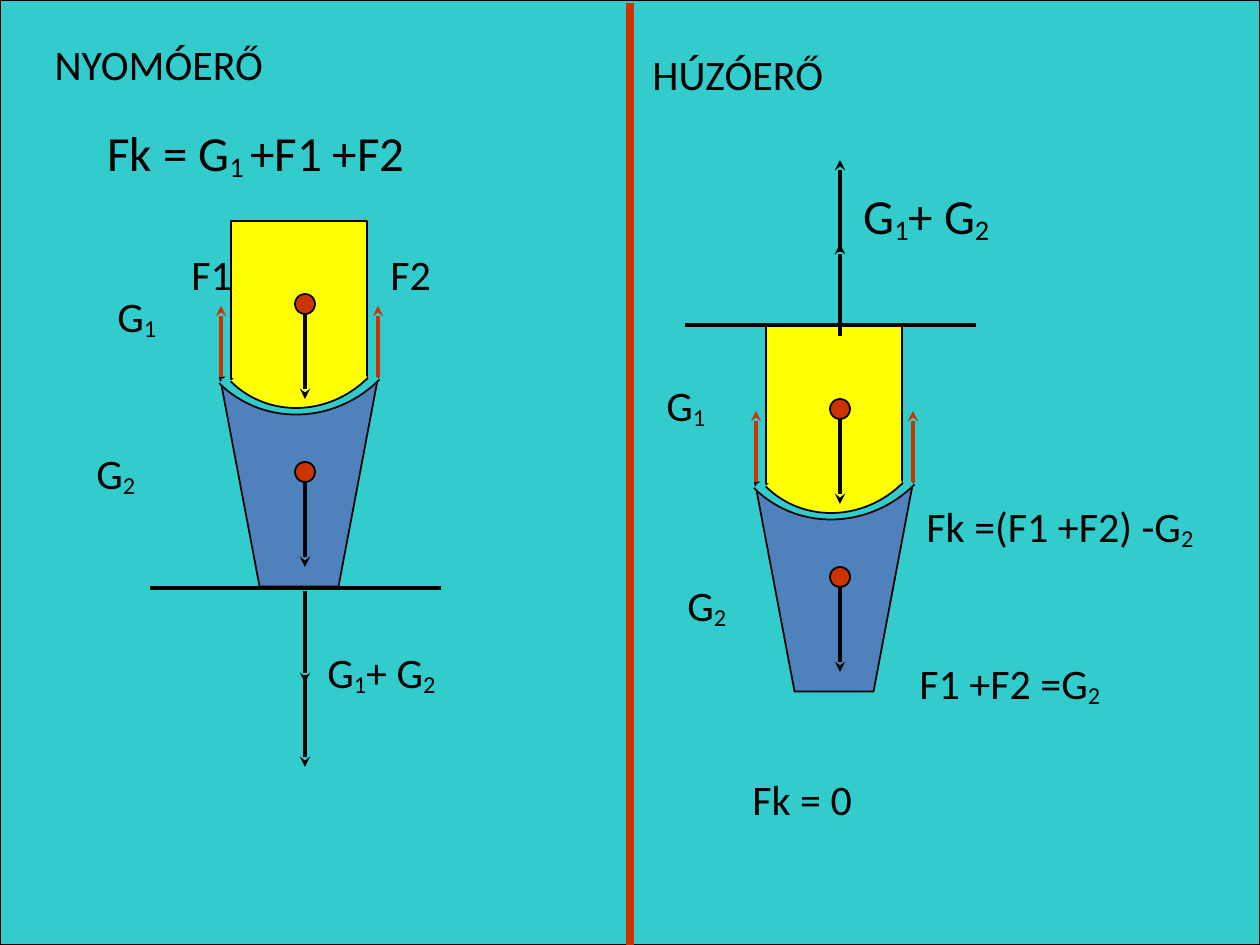
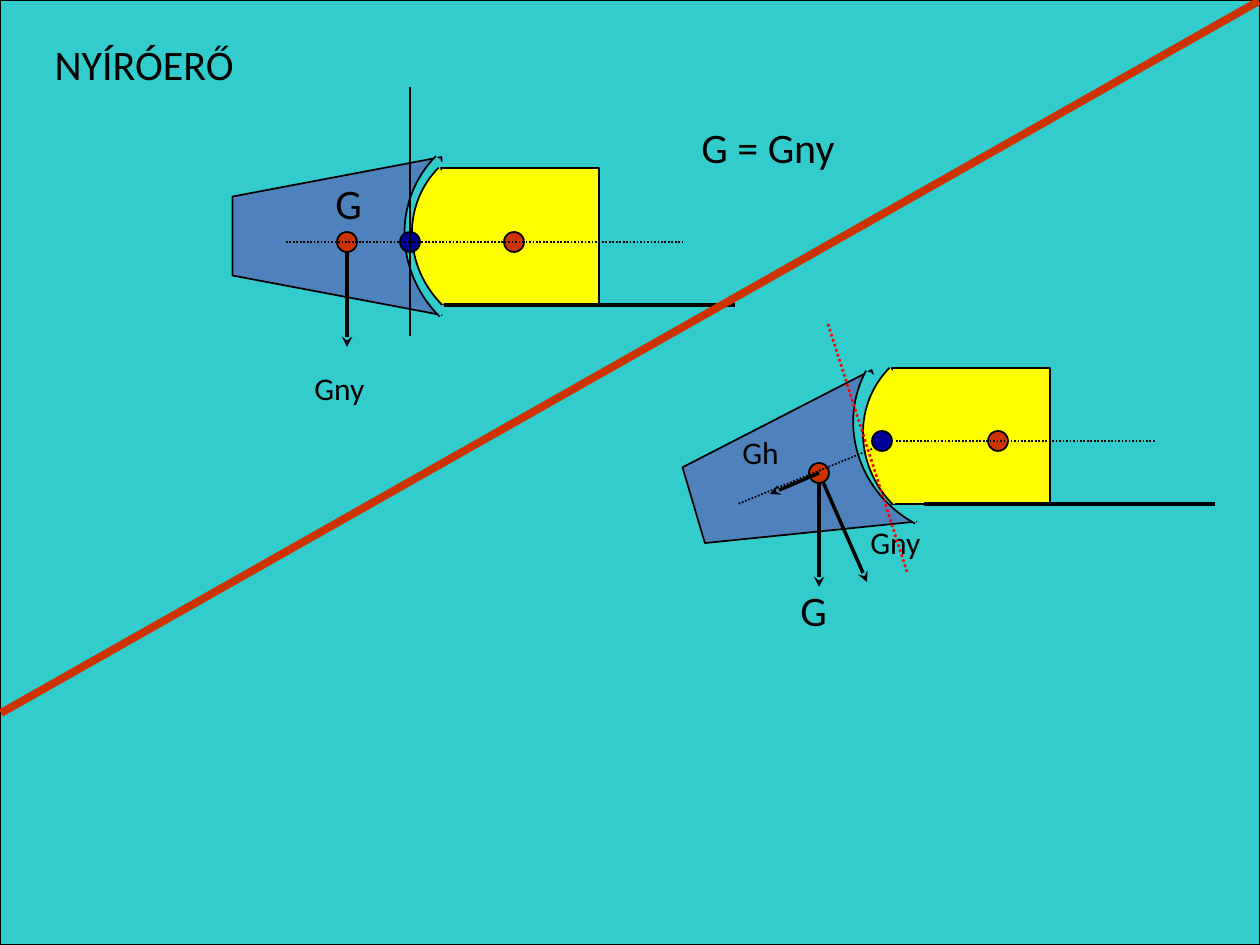
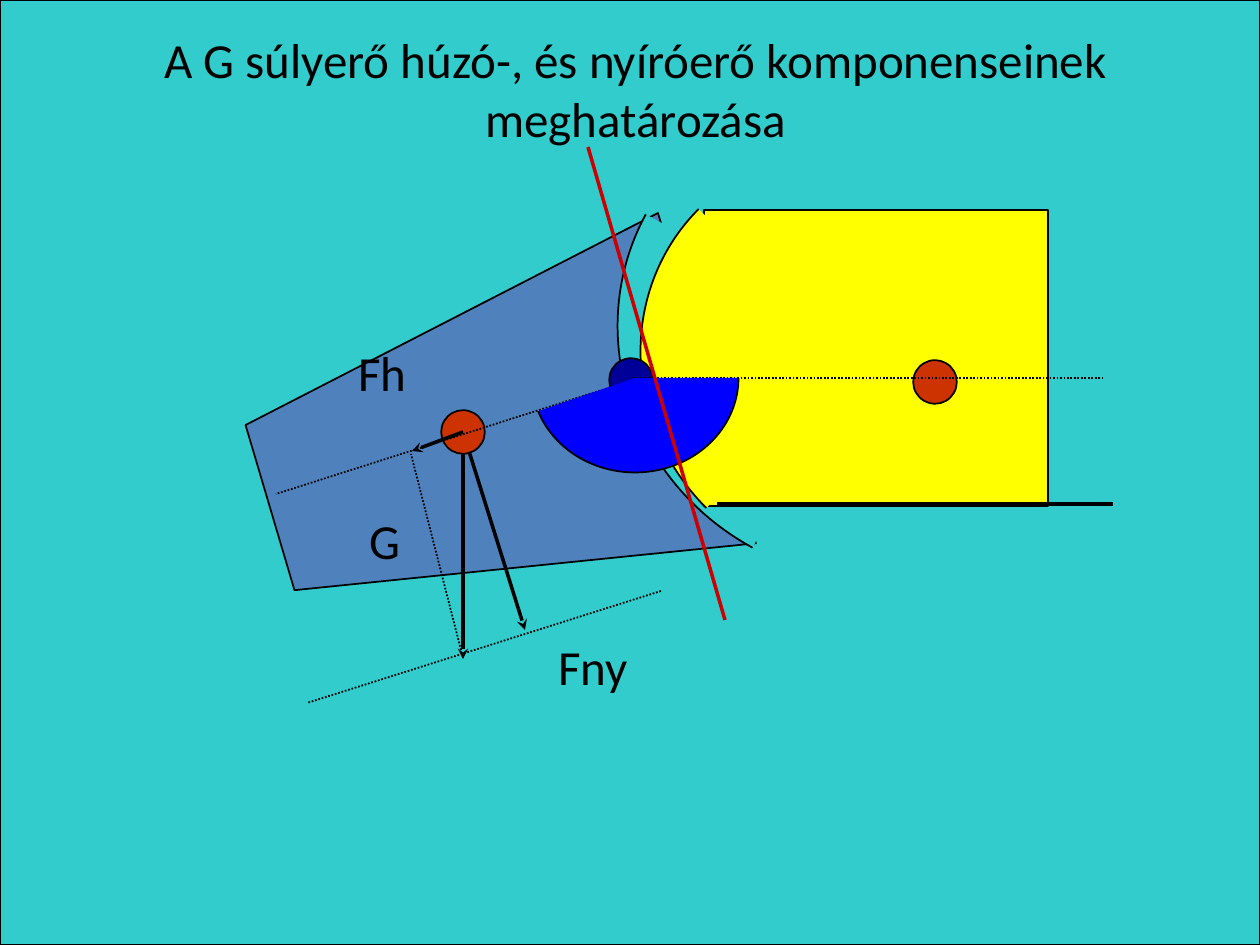
"""Builds three slides on the pressing, pulling and shearing forces in a joint."""
from math import cos, radians, sin

from lxml.etree import SubElement
from pptx import Presentation
from pptx.dml.color import RGBColor
from pptx.enum.dml import MSO_LINE
from pptx.enum.shapes import MSO_CONNECTOR as CONN, MSO_SHAPE as SHAPE
from pptx.enum.text import MSO_ANCHOR as ANCHOR, MSO_AUTO_SIZE as AUTO, PP_ALIGN as ALIGN
from pptx.oxml.ns import qn
from pptx.util import Emu, Pt

PX = 914400 / 126
SLIDE = (1260, 945)
THEME = {
    "font": "Calibri", "ink": "000000", "ground": "33CCCC", "upper": "FFFF00",
    "lower": "4F81BD", "mass": "CC3300", "pivot": "000099", "angle": "0000FF",
    "big": 28, "mid": 24, "small": 18, "outline": 1,
}
LINES = {
    "force": ("000000", 2, "arrow", (0, 92)),
    "friction": ("CC3300", 2, "arrow", (0, -71)),
    "support": ("000000", 2, "plain", (291, 0)),
    "axis": ("000000", 1, "plain", (0, 249)),
    "dotted": ("000000", 1, "dotted", (397, 0)),
    "divider": ("CC3300", 4.5, "plain", (0, 942)),
    "tangent": ("CC0000", 2, "plain", (137, 473)),
    "dotted tangent": ("FF0000", 1.5, "dotted", (79, 248)),
}
BONE, BLOCK, CUP, BALL, DOT = (158, 209), (136, 158), (232, 222), (199, 189), (20, 20)

UPRIGHT_JOINT = [
    ("lower", 301, 301, 0),
    ("upper", 299, 300, 0),
    ("load", 305, 304, (0, 95)),
    ("load", 305, 472, (0, 95)),
    ("line", "friction", 221, 377),
    ("line", "friction", 378, 377),
]

SLIDES = [
    {
        "title": "NYOMÓERŐ",
        "joints": [(0, 0), (535, 105)],
        "parts": [
            ("line", "support", 685, 325),
            ("line", "divider", 630, 3),
            ("line", "support", 150, 588),
            ("line", "force", 305, 591),
            ("line", "force", 305, 675),
            ("line", "force", 840, 252, 0, -92),
            ("line", "force", 840, 336, 0, -92),
            ("text", 654, 373, "G_1"),
            ("text", 84, 441, "G_2"),
            ("text", 95, 116, "Fk = G_1 _+F1 +F2", "big"),
            ("text", 315, 640, "G_1_+ G_2"),
            ("text", 851, 179, "G_1_+ G_2", "big"),
            ("text", 914, 494, "Fk =(F1 +F2) -G_2"),
            ("text", 179, 242, "F1"),
            ("text", 378, 242, "F2"),
            ("text", 640, 42, "HÚZÓERŐ"),
            ("text", 740, 767, "Fk = 0"),
            ("text", 907, 651, "F1 +F2 =G_2"),
            ("text", 105, 284, "G_1"),
            ("text", 675, 573, "G_2"),
        ],
    },
    {
        "title": "NYÍRÓERŐ",
        "parts": [
            ("lower", 518, 238, 90),
            ("upper", 520, 236, 90),
            ("dot", 514, 242, "mass"),
            ("load", 347, 242, (0, 105)),
            ("line", "support", 444, 305),
            ("dot", 410, 242, "pivot"),
            ("line", "dotted", 286, 242),
            ("text", 323, 171, "G"),
            ("lower", 968, 426, 73.5),
            ("upper", 971, 436, 90),
            ("load", 819, 473, (0, 114), (48, 109), (-49, 21)),
            ("line", "support", 924, 504),
            ("text", 788, 578, "G"),
            ("dot", 998, 441, "mass"),
            ("dot", 882, 441, "pivot"),
            ("line", "dotted", 872, 449, -134, 55),
            ("line", "dotted", 896, 441, 259),
            ("line", "divider", 1, 713, 1258, -712),
            ("line", "axis", 410, 87),
            ("text", 689, 115, "G = Gny"),
            ("text", 302, 363, "Gny", "small"),
            ("text", 858, 517, "Gny", "small"),
            ("text", 730, 427, "Gh", "small"),
            ("line", "dotted tangent", 828, 324),
        ],
    },
    {
        "title": "A G súlyerő húzó-, és nyíróerő komponenseinek meghatározása",
        "title box": (32, 23, 1207, 130),
        "title style": ("big", ALIGN.CENTER),
        "scale": 2.18,
        "parts": [
            ("lower", 868, 335, 73.5),
            ("upper", 876, 358, 90),
            ("dot", 935, 382, "mass"),
            ("load", 463, 432, (0, 227), (62, 198), (-51, 19)),
            ("dot", 631, 380, "pivot"),
            ("line", "dotted", 630, 381, -354, 113),
            ("line", "dotted", 633, 378, 470),
            ("text", 357, 504, "G", "big"),
            ("sector", 635, 378, (207, 189), 161),
            ("text", 546, 630, "Fny", "big"),
            ("text", 346, 336, "Fh", "big"),
            ("line", "support", 717, 504, 396),
            ("line", "dotted", 461, 650, -50, -196),
            ("line", "dotted", 661, 591, -354, 112),
            ("line", "tangent", 588, 147),
        ],
    },
]


def emu(*lengths):
    return [Emu(round(n * PX)) for n in lengths]


def color(name):
    return RGBColor.from_string(THEME.get(name, name))


def turned(x, y, angle):
    c, s = cos(radians(angle)), sin(radians(angle))
    return x * c - y * s, x * s + y * c


def add_shape(s, kind, cx, cy, size, fill, rotation=0):
    w, h = size
    sp = s.shapes.add_shape(kind, *emu(cx - w / 2, cy - h / 2, w, h))
    sp.shadow.inherit = False
    sp.fill.solid()
    sp.fill.fore_color.rgb = color(fill)
    sp.line.color.rgb = color("ink")
    sp.line.width = Pt(THEME["outline"])
    sp.rotation = rotation
    return sp


def scaled(size, scale):
    return [n * scale for n in size]


def add_lower(s, scale, cx, cy, angle):
    dx, dy = turned(-2 * scale, 181 * scale, angle)
    add_shape(s, SHAPE.TRAPEZOID, cx + dx, cy + dy, scaled(BONE, scale), "lower", 180 + angle)
    add_shape(s, SHAPE.ARC, cx, cy, scaled(CUP, scale), "ground", 135 + angle)


def add_upper(s, scale, cx, cy, angle):
    dx, dy = turned(2 * scale, 11 * scale, angle)
    block = BLOCK[::-1] if angle == 90 else BLOCK
    add_shape(s, SHAPE.RECTANGLE, cx, cy, scaled(block, scale), "upper")
    add_shape(s, SHAPE.ARC, cx + dx, cy + dy, scaled(BALL, scale), "upper", 135 + angle)


def add_sector(s, scale, cx, cy, size, degrees):
    sp = add_shape(s, SHAPE.ARC, cx, cy, size, "angle")
    sp.adjustments[0] = 0
    sp.adjustments[1] = degrees * 0.6


def add_dot(s, scale, cx, cy, fill):
    add_shape(s, SHAPE.OVAL, cx, cy, scaled(DOT, scale), fill)


def add_load(s, scale, x, y, weight, shear=None, pull=None):
    for force in (weight, shear):
        if force:
            add_line(s, scale, "force", x, y, *force)
    add_dot(s, scale, x, y, "mass")
    if pull:
        add_line(s, scale, "force", x, y, *pull)


def add_line(s, scale, style, x, y, dx=None, dy=0):
    ink, width, look, default = LINES[style]
    if dx is None:
        dx, dy = default
    cx = s.shapes.add_connector(CONN.STRAIGHT, *emu(x, y, x + dx, y + dy))
    cx.line.color.rgb = color(ink)
    cx.line.width = Pt(width)
    if look == "dotted":
        cx.line.dash_style = MSO_LINE.ROUND_DOT
    spPr = cx.element.spPr
    if look == "arrow":
        SubElement(spPr.find(qn("a:ln")), qn("a:tailEnd"), type="stealth")
    SubElement(spPr, qn("a:effectLst"))


def write(tf, text, size, align=ALIGN.LEFT):
    tf.word_wrap = True
    tf.auto_size = AUTO.NONE
    tf.vertical_anchor = ANCHOR.TOP
    p = tf.paragraphs[0]
    p.alignment = align
    p.font.name = THEME["font"]
    p.font.size = Pt(THEME[size])
    p.font.color.rgb = color("ink")
    for i, piece in enumerate(text.split("_")):
        r = p.add_run()
        r.text = piece
        if i % 2:
            r._r.get_or_add_rPr().set("baseline", "-12000")


def text_width(text, size):
    if size == "small":
        return 139
    if len(text) > 3:
        return 346
    return 84 if text.startswith("G") else 116


def add_text(s, scale, x, y, text, size="mid"):
    height = THEME[size] * 2.6
    tb = s.shapes.add_textbox(*emu(x, y, text_width(text, size), height))
    write(tb.text_frame, text, size)


DRAW = {"lower": add_lower, "upper": add_upper, "sector": add_sector, "dot": add_dot,
        "load": add_load, "line": add_line, "text": add_text}


def shifted(part, dx, dy):
    i = 2 if part[0] == "line" else 1
    return (*part[:i], part[i] + dx, part[i + 1] + dy, *part[i + 2:])


def add_slide(prs, content):
    s = prs.slides.add_slide(prs.slide_layouts[5])
    title = s.shapes.title
    w, h = SLIDE
    ground = add_shape(s, SHAPE.RECTANGLE, w / 2, h / 2, SLIDE, "ground")
    title.element.addprevious(ground.element)
    box = content.get("title box", (42, 32, 546, 63))
    title.left, title.top, title.width, title.height = emu(*box)
    write(title.text_frame, content["title"], *content.get("title style", ["mid"]))
    joints = [shifted(part, *offset) for offset in content.get("joints", [])
              for part in UPRIGHT_JOINT]
    for kind, *args in joints + content["parts"]:
        DRAW[kind](s, content.get("scale", 1), *args)


def main():
    prs = Presentation()
    prs.slide_width, prs.slide_height = emu(*SLIDE)
    for content in SLIDES:
        add_slide(prs, content)
    prs.save("out.pptx")


if __name__ == "__main__":
    main()
